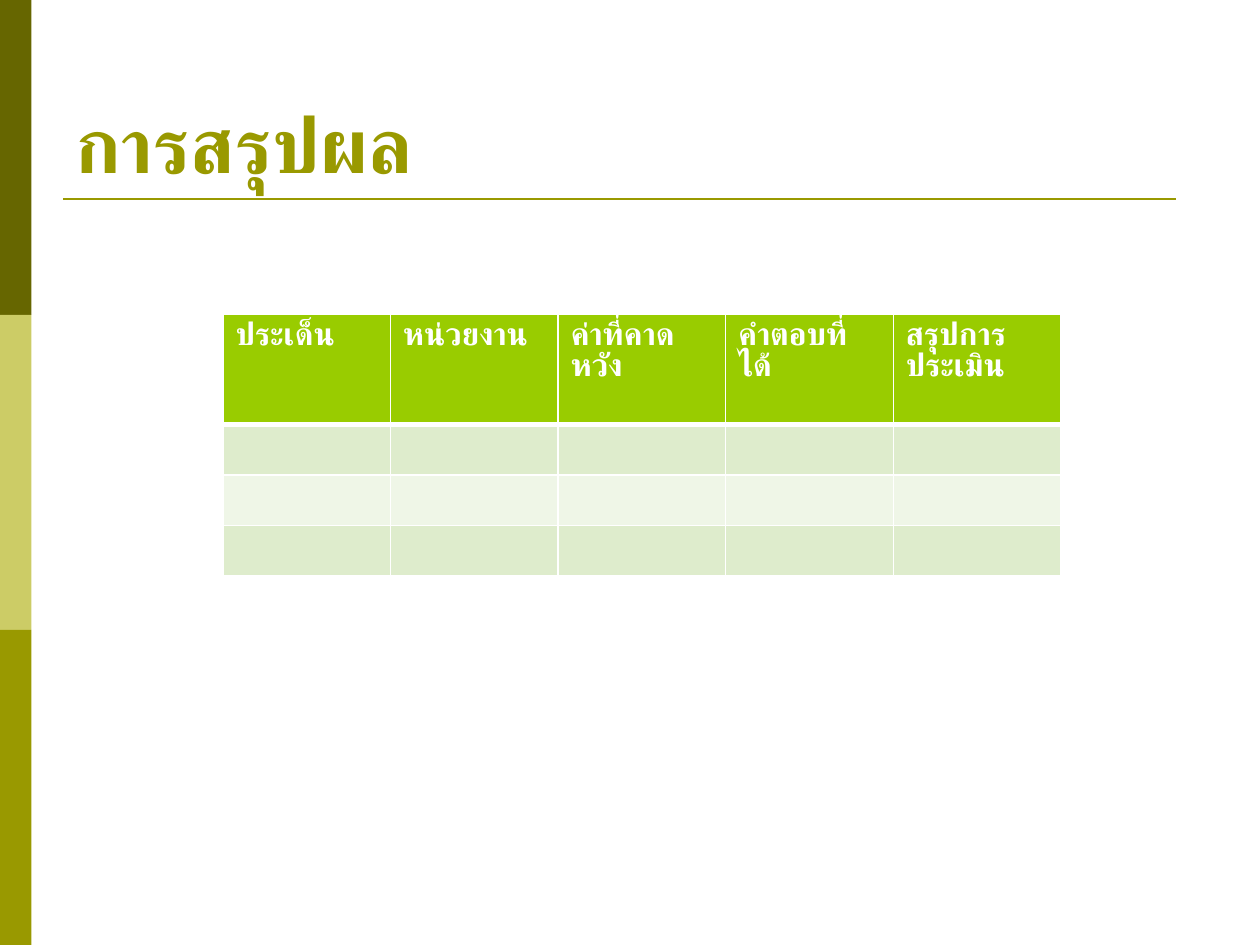
from dataclasses import dataclass

from lxml.etree import SubElement
from pptx import Presentation
from pptx.dml.color import RGBColor
from pptx.enum.shapes import MSO_CONNECTOR as Connector, MSO_SHAPE as Shape
from pptx.enum.text import MSO_ANCHOR as Anchor
from pptx.oxml.ns import qn
from pptx.util import Inches, Pt

COLORS = {
    "dark": "666600",
    "light": "CCCC66",
    "olive": "999900",
    "header": "99CC00",
    "odd": "DEECCC",
    "even": "EFF6E7",
    "white": "FFFFFF",
}


@dataclass
class Band:
    top: float
    color: str


BANDS = [Band(0, "dark"), Band(2.5, "light"), Band(5, "olive")]
HEADERS = ["ประเด็น", "หน่วยงาน", "ค่าที่คาดหวัง", "คำตอบที่ได้", "สรุปการประเมิน"]
ROW_HEIGHTS = [0.88, 0.4, 0.4, 0.4]
ROW_COLORS = ["header", "odd", "even", "odd"]
COLUMN_WIDTH = 1.33
TITLE_FONT = {"name": "Roboto", "size": Pt(44), "bold": True}
HEADER_FONT = {"name": "DejaVu Sans", "size": Pt(18), "bold": True}


def color(name: str) -> RGBColor:
    return RGBColor.from_string(COLORS[name])


def write(frame, text: str, font_format: dict, color_name: str) -> None:
    span = frame.paragraphs[0].add_run()
    span.text = text
    for key, value in font_format.items():
        setattr(span.font, key, value)
    span.font.color.rgb = color(color_name)


def draw_band(page, band: Band) -> None:
    box = page.shapes.add_shape(
        Shape.RECTANGLE, 0, Inches(band.top), Inches(0.25), Inches(2.5)
    )
    box.shadow.inherit = False
    box.fill.solid()
    box.fill.fore_color.rgb = color(band.color)
    box.line.fill.background()


def draw_rule(page) -> None:
    rule = page.shapes.add_connector(
        Connector.STRAIGHT, Inches(0.5), Inches(1.58), Inches(9.33), Inches(1.58)
    )
    rule.line.color.rgb = color("olive")
    rule.line.width = Pt(1.5)
    SubElement(rule._element.spPr, qn("a:effectLst"))


def draw_title(page) -> None:
    box = page.shapes.add_textbox(Inches(0.5), Inches(0.3), Inches(9), Inches(1.25))
    box.text_frame.word_wrap = True
    box.text_frame.vertical_anchor = Anchor.BOTTOM
    write(box.text_frame, "การสรุปผล", TITLE_FONT, "olive")


def set_borders(cell, widths: dict[str, float]) -> None:
    properties = cell._tc.get_or_add_tcPr()
    for side, width in widths.items():
        line = SubElement(properties, qn(f"a:ln{side}"), w=str(Pt(width)))
        fill = SubElement(line, qn("a:solidFill"))
        SubElement(fill, qn("a:srgbClr"), val=COLORS["white"])


def draw_table(page) -> None:
    table = page.shapes.add_table(
        len(ROW_HEIGHTS), len(HEADERS), Inches(1.77), Inches(2.49),
        Inches(COLUMN_WIDTH * len(HEADERS)), Inches(sum(ROW_HEIGHTS)),
    ).table
    for column in table.columns:
        column.width = Inches(COLUMN_WIDTH)
    for index, row in enumerate(table.rows):
        row.height = Inches(ROW_HEIGHTS[index])
        top = 3 if index == 1 else 1
        bottom = 3 if index == 0 else 1
        for cell in row.cells:
            set_borders(cell, {"L": 1, "R": 1, "T": top, "B": bottom})
            cell.fill.solid()
            cell.fill.fore_color.rgb = color(ROW_COLORS[index])
    for cell, text in zip(table.rows[0].cells, HEADERS):
        write(cell.text_frame, text, HEADER_FONT, "white")


def main() -> None:
    deck = Presentation()
    deck.slide_width, deck.slide_height = Inches(10), Inches(7.5)
    page = deck.slides.add_slide(deck.slide_layouts[6])
    for band in BANDS:
        draw_band(page, band)
    draw_rule(page)
    draw_title(page)
    draw_table(page)
    deck.save("out.pptx")


if __name__ == "__main__":
    main()
